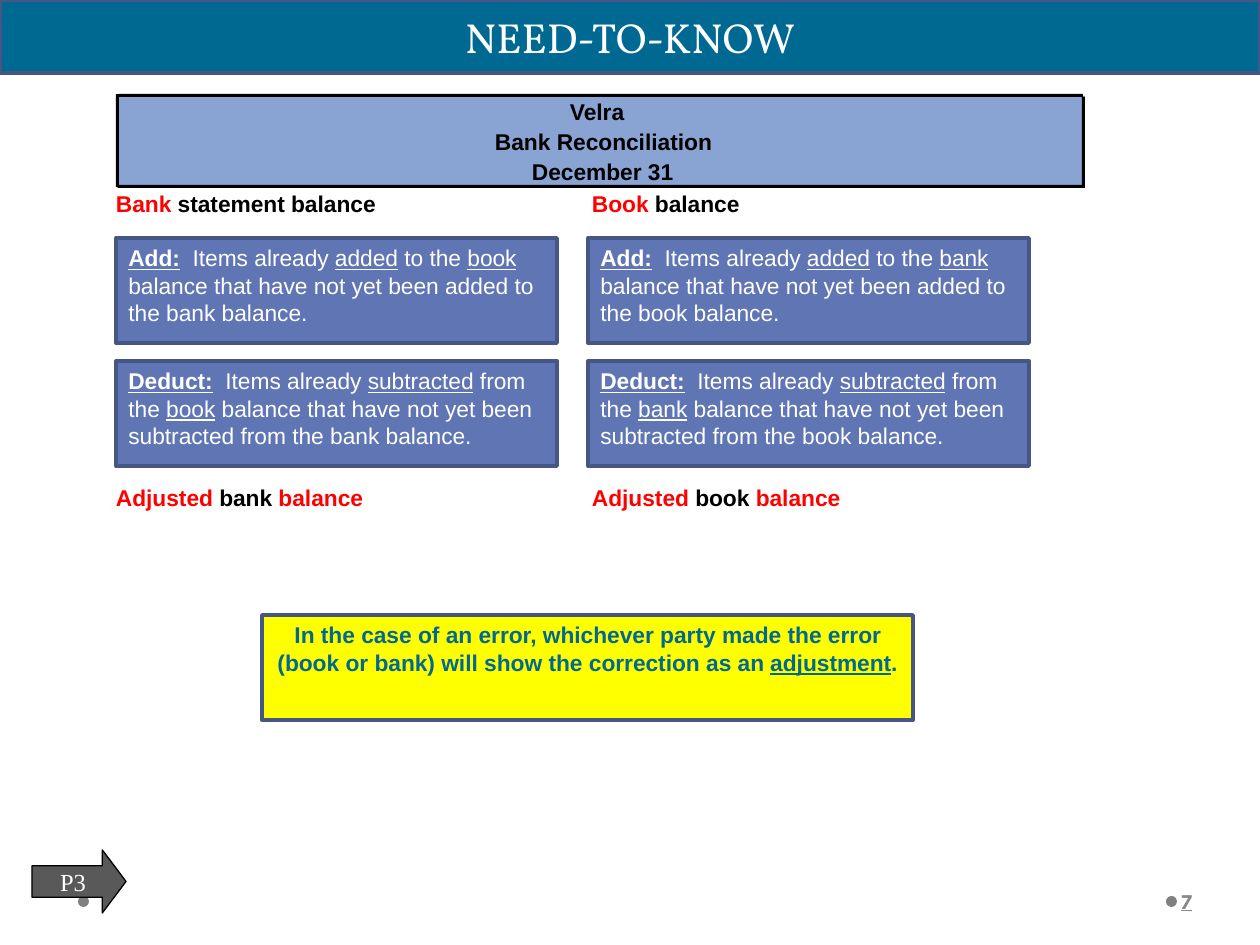
from pptx import Presentation
from pptx.dml.color import RGBColor
from pptx.enum.shapes import MSO_SHAPE
from pptx.enum.text import MSO_ANCHOR, MSO_AUTO_SIZE, PP_ALIGN
from pptx.util import Emu, Pt

EMU_PER_PX = 914400 / 126
COLORS = {
    "teal": "006991", "border": "475785", "header": "89A3D3", "card": "6076B4",
    "yellow": "FFFF00", "arrow": "595959", "dot": "808080", "number": "898989",
    "red": "FF0000", "black": "000000", "white": "FFFFFF",
}
UNDERLINED = {"underline": True}
RED = {"color": "red"}


def px(length):
    return Emu(round(length * EMU_PER_PX))


class SlideBuilder:
    body = {"name": "Arial", "size": Pt(13), "bold": True, "underline": False, "color": "black"}
    card = {**body, "bold": False, "color": "white"}

    def __init__(self, presentation):
        self.slide = presentation.slides.add_slide(presentation.slide_layouts[5])

    def paint(self, shape, fill, line=None, weight=2.25):
        shape.fill.solid()
        shape.fill.fore_color.rgb = RGBColor.from_string(COLORS[fill])
        if line:
            shape.line.color.rgb = RGBColor.from_string(COLORS[line])
            shape.line.width = Pt(weight)
        else:
            shape.line.fill.background()

    def add_text(self, shape, runs, style, align=PP_ALIGN.LEFT, **frame_format):
        frame = shape.text_frame
        frame_format = {"word_wrap": True, "vertical_anchor": MSO_ANCHOR.TOP, **frame_format}
        for key, value in frame_format.items():
            setattr(frame, key, value)
        paragraph = frame.paragraphs[0]
        paragraph.alignment = align
        for text, changes in runs:
            run = paragraph.add_run()
            run.text = text
            for key, value in {**style, **changes}.items():
                if key == "color":
                    run.font.color.rgb = RGBColor.from_string(COLORS[value])
                else:
                    setattr(run.font, key, value)

    def title(self, text, box):
        banner = self.slide.shapes.title
        for key, value in zip(("left", "top", "width", "height"), box):
            setattr(banner, key, px(value))
        self.paint(banner, "teal", "border")
        style = {"name": "Vollkorn", "size": Pt(24), "color": "white"}
        self.add_text(banner, [(text, {})], style, PP_ALIGN.CENTER,
                      vertical_anchor=MSO_ANCHOR.MIDDLE)

    def shape(self, box, fill, line=None, weight=2.25, kind=MSO_SHAPE.RECTANGLE):
        shape = self.slide.shapes.add_shape(kind, *map(px, box))
        shape.shadow.inherit = False
        self.paint(shape, fill, line, weight)
        return shape

    def label(self, box, runs):
        label = self.slide.shapes.add_textbox(*map(px, box))
        margins = dict.fromkeys(
            ("margin_left", "margin_top", "margin_right", "margin_bottom"), 0)
        self.add_text(label, runs, self.body, word_wrap=False,
                      auto_size=MSO_AUTO_SIZE.SHAPE_TO_FIT_TEXT, **margins)

    def rule_card(self, box, action, verb, link, other, own):
        card = self.shape(box, "card", "border")
        runs = [
            (f"{action}:", {"bold": True, **UNDERLINED}),
            ("  Items already ", {}),
            (verb, UNDERLINED),
            (f" {link} the ", {}),
            (other, UNDERLINED),
            (f" balance that have not yet been {verb} {link} the {own} balance.", {}),
        ]
        self.add_text(card, runs, self.card)

    def objective_arrow(self, box, text):
        arrow = self.shape(box, "arrow", "black", 0.75, MSO_SHAPE.RIGHT_ARROW)
        arrow.adjustments[0] = 0.5
        arrow.adjustments[1] = 0.375
        style = {"name": "Times New Roman", "size": Pt(14), "color": "white"}
        self.add_text(arrow, [(text, {})], style, PP_ALIGN.CENTER,
                      vertical_anchor=MSO_ANCHOR.MIDDLE, word_wrap=False)

    def page_number(self, box, text):
        number = self.slide.shapes.add_textbox(*map(px, box))
        style = {"name": "League Spartan", "size": Pt(12), "bold": True,
                 "underline": True, "color": "number"}
        self.add_text(number, [(text, {})], style, vertical_anchor=MSO_ANCHOR.MIDDLE,
                      margin_left=px(4), margin_right=px(6))


def main():
    presentation = Presentation()
    presentation.slide_width = px(1260)
    presentation.slide_height = px(945)
    builder = SlideBuilder(presentation)

    builder.title("NEED-TO-KNOW", (0, 0, 1260, 73))
    for dot_left in (1166, 78):
        builder.shape((dot_left, 896, 11, 11), "dot", kind=MSO_SHAPE.OVAL)

    builder.shape((117, 96, 968, 92), "header")
    heading = [("Velra", 74), ("Bank Reconciliation", 224), ("December 31", 150)]
    for row, (text, width) in enumerate(heading):
        builder.label((607 - width // 2, 98 + 30 * row, width, 30), [(text, {})])
    for edge in ((116, 94, 3, 93), (1082, 97, 3, 91), (118, 94, 965, 3), (118, 185, 965, 3)):
        builder.shape(edge, "black")

    sides = [
        ("bank", "book", 116, 116, ("Bank", " statement balance"), (263, 251)),
        ("book", "bank", 592, 588, ("Book", " balance"), (150, 253)),
    ]
    rules = [("Add", "added", "to"), ("Deduct", "subtracted", "from")]
    for own, other, label_left, card_left, (party, rest), (top_width, end_width) in sides:
        builder.label((label_left, 190, top_width, 28), [(party, RED), (rest, {})])
        for row, rule in enumerate(rules):
            builder.rule_card((card_left, 238 + 123 * row, 441, 105), *rule, other, own)
        builder.label((label_left, 484, end_width, 28),
                      [("Adjusted ", RED), (own, {}), (" balance", RED)])

    error_note = builder.shape((262, 615, 651, 105), "yellow", "border")
    builder.add_text(error_note, [
        ("In the case of an error, whichever party made the error "
         "(book or bank) will show the correction as an ", {}),
        ("adjustment", UNDERLINED),
        (".", {}),
    ], {**builder.body, "color": "teal"}, PP_ALIGN.CENTER)

    builder.objective_arrow((32, 850, 94, 63), "P3")
    builder.page_number((1177, 876, 77, 50), "7")
    presentation.save("out.pptx")


if __name__ == "__main__":
    main()
